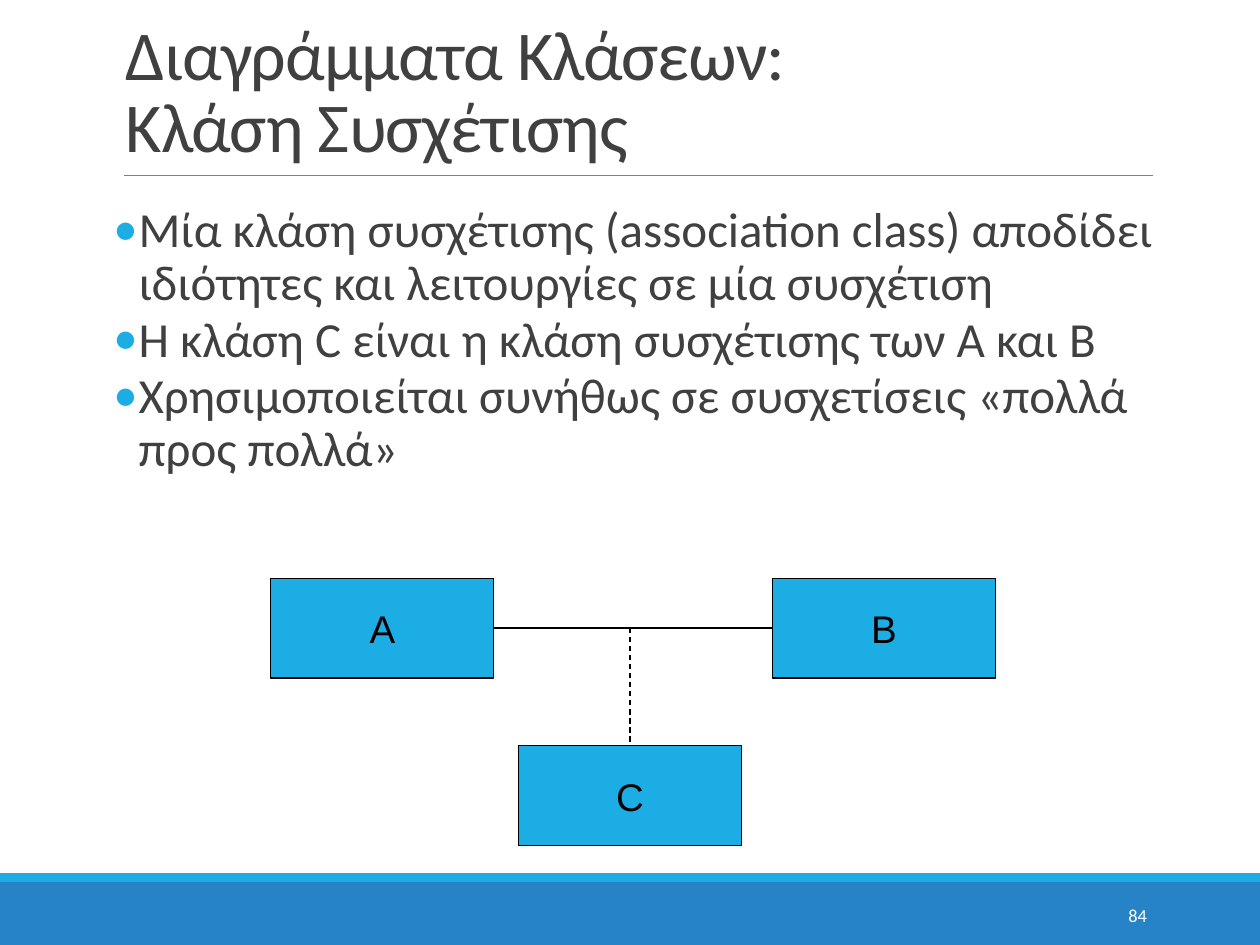
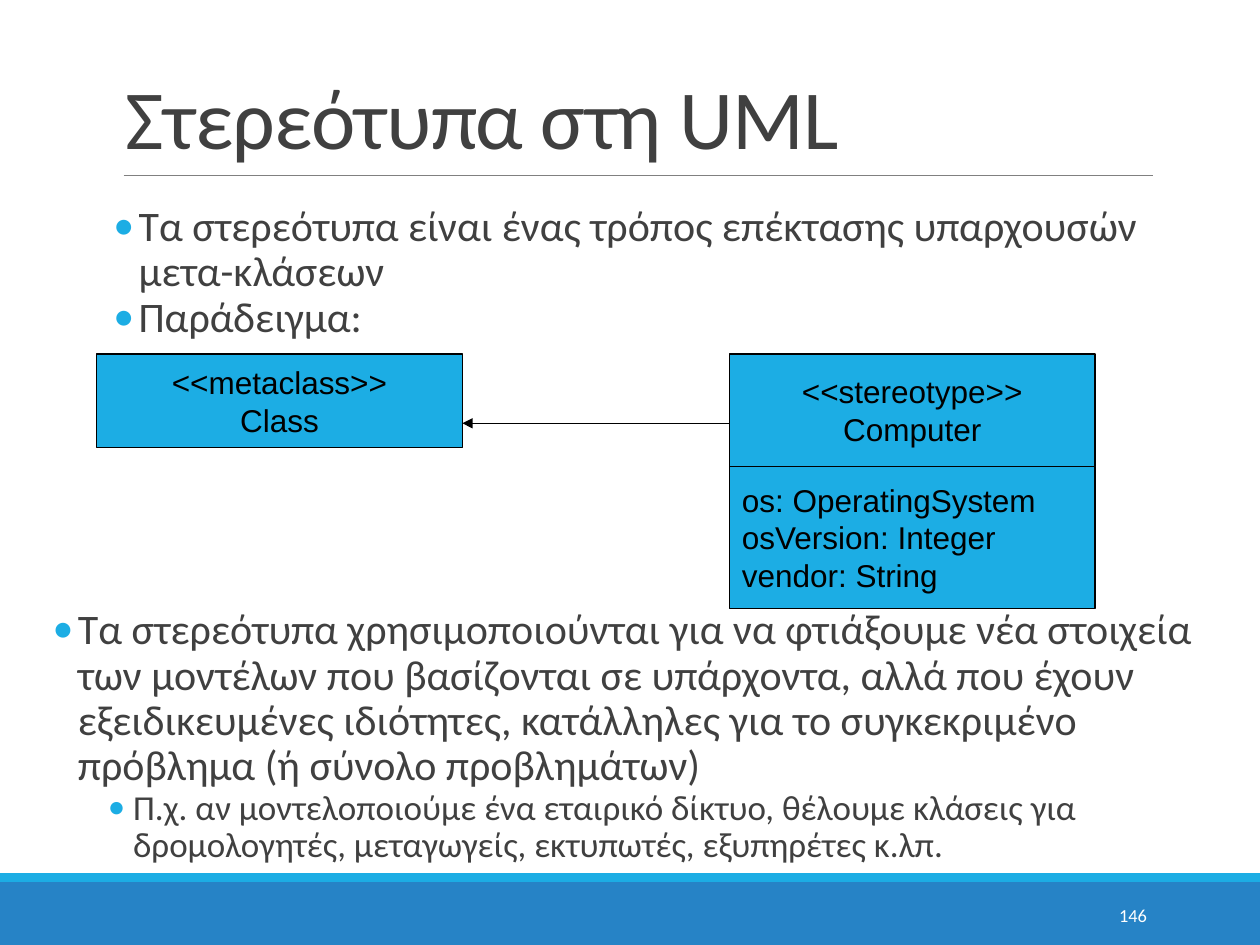
from dataclasses import dataclass

from lxml.etree import SubElement
from pptx import Presentation
from pptx.dml.color import RGBColor
from pptx.enum.dml import MSO_LINE as Dash
from pptx.enum.shapes import MSO_CONNECTOR as Link, MSO_SHAPE as Form
from pptx.enum.text import MSO_ANCHOR as Anchor, PP_ALIGN as Align
from pptx.oxml.ns import qn
from pptx.util import Pt

SKY, BLUE, INK, GRAY = "1CADE4", "2683C6", "404040", "808080"
BLACK, WHITE = "000000", "FFFFFF"
HANG = 14.4


@dataclass
class Rect:
    x: float
    y: float
    w: float
    h: float

    @property
    def right(self) -> float:
        return self.x + self.w

    @property
    def mid(self) -> float:
        return self.y + self.h / 2

    def pts(self) -> list:
        return [Pt(v) for v in (self.x, self.y, self.w, self.h)]


@dataclass
class Item:
    text: str
    size: float
    left: float = HANG
    after: float = 0


@dataclass
class Node:
    rect: Rect
    lines: list
    size: float
    align: Align = Align.CENTER


@dataclass
class Line:
    x1: float
    y1: float
    x2: float
    y2: float
    color: str = BLACK
    width: float = 0.75
    dash: bool = False
    arrow: bool = False


TITLE = Rect(64.8, 7.9, 594, 90.7)
NUMBER = Rect(584.6, 508.3, 77.8, 28.8)
BANDS = [(Rect(0, 504, 720, 36), BLUE), (Rect(0, 499, 720, 5), SKY)]
RULE = Line(70.6, 100.1, 658.8, 100.1, GRAY, 0.5)


def rgb(code: str) -> RGBColor:
    return RGBColor.from_string(code)


def write(frame, text: str, *, size: float, font="Calibri", color=INK,
          align=Align.LEFT, lead=None, after=0, track=0, first=True):
    para = frame.paragraphs[0] if first else frame.add_paragraph()
    para.text = text
    para.alignment = align
    para.space_after = Pt(after)
    if lead:
        para.line_spacing = lead
    for run in para.runs:
        run.font.name = font
        run.font.size = Pt(size)
        run.font.color.rgb = rgb(color)
        if track:
            run.font._element.set("spc", str(int(track * 100)))
    return para


def dot(para, left: float) -> None:
    props = para._p.get_or_add_pPr()
    props.set("marL", str(Pt(left)))
    props.set("indent", str(-Pt(HANG)))
    tint = SubElement(props, qn("a:buClr"))
    SubElement(tint, qn("a:srgbClr"), val=SKY)
    SubElement(props, qn("a:buFont"), typeface="Calibri")
    SubElement(props, qn("a:buChar"), char="•")


def add_text(slide, rect: Rect, anchor=Anchor.TOP, side=7.2):
    frame = slide.shapes.add_textbox(*rect.pts()).text_frame
    frame.word_wrap = True
    frame.vertical_anchor = anchor
    frame.margin_left = frame.margin_right = Pt(side)
    return frame


def add_list(slide, rect: Rect, items: list, side: float = 0) -> None:
    frame = add_text(slide, rect, side=side)
    for i, item in enumerate(items):
        para = write(frame, item.text, size=item.size, lead=0.9,
                     after=item.after, first=i == 0)
        dot(para, item.left)


def add_rect(slide, rect: Rect, fill: str, edge: str = ""):
    shape = slide.shapes.add_shape(Form.RECTANGLE, *rect.pts())
    shape.shadow.inherit = False
    shape.fill.solid()
    shape.fill.fore_color.rgb = rgb(fill)
    if edge:
        shape.line.color.rgb = rgb(edge)
        shape.line.width = Pt(0.75)
    else:
        shape.line.fill.background()
    return shape


def add_node(slide, node: Node) -> None:
    frame = add_rect(slide, node.rect, SKY, BLACK).text_frame
    frame.word_wrap = True
    frame.vertical_anchor = Anchor.MIDDLE
    for i, text in enumerate(node.lines):
        write(frame, text, size=node.size, font="Arial", color=BLACK,
              align=node.align, first=i == 0)


def add_line(slide, line: Line) -> None:
    ends = [Pt(v) for v in (line.x1, line.y1, line.x2, line.y2)]
    link = slide.shapes.add_connector(Link.STRAIGHT, *ends)
    link.line.color.rgb = rgb(line.color)
    link.line.width = Pt(line.width)
    if line.dash:
        link.line.dash_style = Dash.DASH
    if line.arrow:
        SubElement(link.line._get_or_add_ln(), qn("a:tailEnd"),
                   type="triangle", w="med", len="med")
    SubElement(link._element.spPr, qn("a:effectLst"))


def add_page(deck, title: str, size: float, number: int):
    slide = deck.slides.add_slide(deck.slide_layouts[6])
    for rect, color in BANDS:
        add_rect(slide, rect, color)
    add_line(slide, RULE)
    write(add_text(slide, TITLE, Anchor.BOTTOM), title, size=size,
          lead=0.85, track=-0.5)
    write(add_text(slide, NUMBER, Anchor.MIDDLE), str(number), size=10.5,
          color=WHITE, align=Align.RIGHT)
    return slide


def draw_link(deck) -> None:
    slide = add_page(deck, "Διαγράμματα Κλάσεων:\nΚλάση Συσχέτισης", 40, 84)
    texts = [
        "Μία κλάση συσχέτισης (association class) αποδίδει ιδιότητες και "
        "λειτουργίες σε μία συσχέτιση",
        "Η κλάση C είναι η κλάση συσχέτισης των Α και B",
        "Χρησιμοποιείται συνήθως σε συσχετίσεις «πολλά προς πολλά»",
    ]
    add_list(slide, Rect(64.8, 113.8, 594, 379.4),
             [Item(text, 28, after=2) for text in texts])
    a, b, c = [Rect(x, y, 127.4, 56.9) for x, y in
               ((154.8, 330.5), (441.4, 330.5), (296.3, 426.2))]
    for rect, name in ((a, "Α"), (b, "Β"), (c, "C")):
        add_node(slide, Node(rect, [name], 22))
    add_line(slide, Line(b.x, b.mid, a.right, a.mid))
    add_line(slide, Line(360, a.mid, 360, c.y, dash=True))


def draw_stereo(deck) -> None:
    slide = add_page(deck, "Στερεότυπα στη UML", 48, 146)
    add_list(slide, Rect(64.8, 113.8, 594, 90.7), [
        Item("Τα στερεότυπα είναι ένας τρόπος επέκτασης υπαρχουσών "
             "μετα-κλάσεων", 24),
        Item("Παράδειγμα:", 24),
    ])
    meta = Rect(55.2, 202.3, 209, 53.3)
    head = Rect(416.8, 202.3, 209, 64.1)
    attrs = Rect(head.x, head.y + head.h, head.w, 81.4)
    for node in (
        Node(meta, ["<<metaclass>>", "Class"], 18),
        Node(head, ["<<stereotype>>", "Computer"], 18),
        Node(attrs, ["os: OperatingSystem", "osVersion: Integer",
                     "vendor: String"], 18, Align.LEFT),
    ):
        add_node(slide, node)
    add_line(slide, Line(head.x, 241.9, meta.right, 241.9, arrow=True))
    add_list(slide, Rect(23, 344.2, 673.2, 162.7), [
        Item("Τα στερεότυπα χρησιμοποιούνται για να φτιάξουμε νέα στοιχεία "
             "των μοντέλων που βασίζονται σε υπάρχοντα, αλλά που έχουν "
             "εξειδικευμένες ιδιότητες, κατάλληλες για το συγκεκριμένο "
             "πρόβλημα (ή σύνολο προβλημάτων)", 24),
        Item("Π.χ. αν μοντελοποιούμε ένα εταιρικό δίκτυο, θέλουμε κλάσεις "
             "για δρομολογητές, μεταγωγείς, εκτυπωτές, εξυπηρέτες κ.λπ.",
             20, left=46),
    ], side=7.2)


def main() -> None:
    deck = Presentation()
    deck.slide_width, deck.slide_height = Pt(720), Pt(540)
    draw_link(deck)
    draw_stereo(deck)
    deck.save("out.pptx")


if __name__ == "__main__":
    main()
